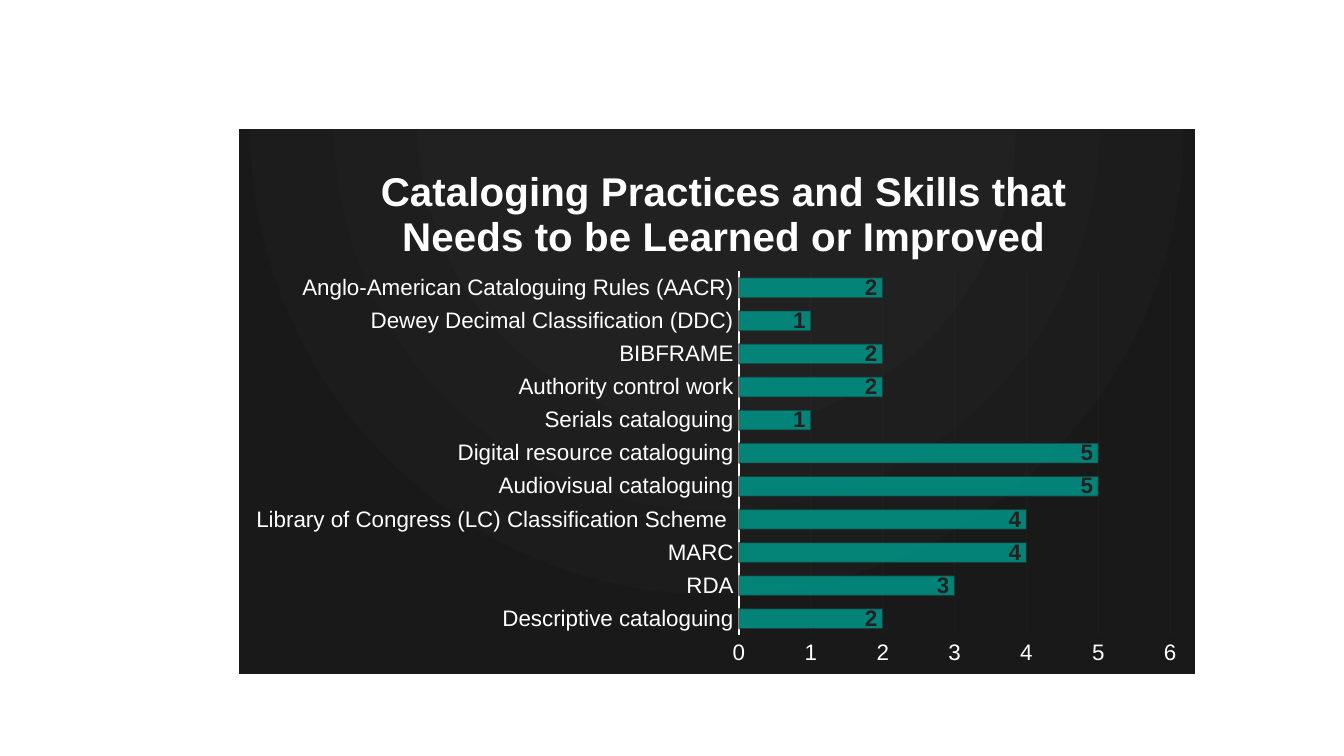
from pptx import Presentation
from pptx import oxml
from pptx import util as u
from pptx.chart import data
from pptx.dml import color
from pptx.enum import chart as ch
from pptx.enum import shapes
from pptx.oxml import ns

PX = 914400 * 10 / 1344  # EMU in one px
WIDTH, HEIGHT = 1344, 756
FONT = "Arial"
COLORS = {"white": "FFFFFF", "dark": "212121", "deep": "191919", "teal": "009688"}

TITLE = "Cataloging Practices and Skills that Needs to be Learned or Improved"
SKILLS = {
    "Descriptive cataloguing": 2,
    "RDA": 3,
    "MARC": 4,
    "Library of Congress (LC) Classification Scheme ": 4,
    "Audiovisual cataloguing": 5,
    "Digital resource cataloguing": 5,
    "Serials cataloguing": 1,
    "Authority control work": 2,
    "BIBFRAME": 2,
    "Dewey Decimal Classification (DDC)": 1,
    "Anglo-American Cataloguing Rules (AACR)": 2,
}

# Chart panel and the parts placed inside it: left, top, width, height
PANEL = (238, 128, 958, 547)
PLOT = (739, 271, 432, 365)
TITLE_CORNER = (373, 158)


def px(length):
    return u.Emu(round(length * PX))


def rgb(name):
    return color.RGBColor.from_string(COLORS[name])


def paint(fill, name):
    fill.solid()
    fill.fore_color.rgb = rgb(name)


def outline(line, name, points):
    paint(line.fill, name)
    line.width = u.Pt(points)


def style_font(font, size, name, bold=False):
    font.name, font.size, font.bold = FONT, u.Pt(size), bold
    font.color.rgb = rgb(name)


def set_opacity(element, path, percent):
    for tint in element.xpath(path):
        alpha = tint.makeelement(ns.qn("a:alpha"), {"val": str(percent * 1000)})
        tint.append(alpha)


def manual_layout(left, top, width=None, height=None, inner=False):
    """Layout element in fractions of the chart panel."""
    values = {"x": (left - PANEL[0]) / PANEL[2], "y": (top - PANEL[1]) / PANEL[3]}
    if width:
        values.update(w=width / PANEL[2], h=height / PANEL[3])
    target = '<c:layoutTarget val="inner"/>' if inner else ""
    modes = '<c:xMode val="edge"/><c:yMode val="edge"/>'
    sizes = "".join(f'<c:{key} val="{value:.4f}"/>' for key, value in values.items())
    return oxml.parse_xml(
        f'<c:layout {ns.nsdecls("c")}><c:manualLayout>{target}{modes}{sizes}'
        "</c:manualLayout></c:layout>"
    )


def add_backdrop(slide):
    paint(slide.background.fill, "dark")
    backdrop = slide.shapes.add_shape(
        shapes.MSO_SHAPE.RECTANGLE, 0, 0, px(WIDTH), px(HEIGHT)
    )
    backdrop.shadow.inherit = False
    paint(backdrop.fill, "white")
    outline(backdrop.line, "white", 2)


def add_skills_chart(slide):
    chart_data = data.CategoryChartData(number_format="General")
    chart_data.categories = SKILLS
    chart_data.add_series("Series 1", SKILLS.values())
    chart = slide.shapes.add_chart(
        ch.XL_CHART_TYPE.BAR_CLUSTERED, *map(px, PANEL), chart_data
    ).chart
    style_font(chart.font, 10, "white")
    chart.has_legend = False
    return chart


def style_panel(chart):
    stops = "".join(
        f'<a:gs pos="{place * 1000}"><a:srgbClr val="{COLORS[name]}"/></a:gs>'
        for place, name in ((0, "dark"), (39, "dark"), (100, "deep"))
    )
    panel = oxml.parse_xml(
        f'<c:spPr {ns.nsdecls("c", "a")}><a:gradFill><a:gsLst>{stops}</a:gsLst>'
        '<a:path path="circle">'
        '<a:fillToRect l="50000" t="-80000" r="50000" b="180000"/></a:path></a:gradFill>'
        f'<a:ln w="{u.Pt(0.75)}"><a:solidFill><a:srgbClr val="{COLORS["white"]}"/>'
        "</a:solidFill></a:ln></c:spPr>"
    )
    chart._chartSpace.xpath("c:chart")[0].addnext(panel)


def style_title(chart):
    heading = chart.chart_title.text_frame
    heading.text = TITLE
    style_font(heading.paragraphs[0].runs[0].font, 21.6, "white", bold=True)
    title = chart._chartSpace.xpath("c:chart/c:title")[0]
    for layout in title.xpath("c:layout"):
        title.remove(layout)
    title.xpath("c:tx")[0].addnext(manual_layout(*TITLE_CORNER))


def style_axes(chart):
    skills, counts = chart.category_axis, chart.value_axis
    for axis in (skills, counts):
        axis.major_tick_mark = axis.minor_tick_mark = ch.XL_TICK_MARK.NONE
        style_font(axis.tick_labels.font, 12, "white")
    outline(skills.format.line, "white", 1.5)
    counts.minimum_scale, counts.maximum_scale, counts.major_unit = 0, 6, 1
    counts.format.line.fill.background()

    # Barely visible gridlines
    outline(counts.major_gridlines.format.line, "white", 0.75)
    set_opacity(counts._element, "c:majorGridlines//a:srgbClr", 2)


def style_bars(chart):
    plot = chart.plots[0]
    plot.gap_width = 65
    plot.vary_by_categories = False
    bars = plot.series[0]
    paint(bars.format.fill, "teal")
    outline(bars.format.line, "dark", 0.75)
    set_opacity(bars._element, "c:spPr/a:solidFill/a:srgbClr", 85)
    set_opacity(bars._element, "c:spPr/a:ln//a:srgbClr", 50)

    # Counts at the inner end of each bar
    labels = bars.data_labels
    labels.show_value = True
    labels.position = ch.XL_LABEL_POSITION.INSIDE_END
    style_font(labels.font, 12, "dark", bold=True)

    # Plot position
    area = chart._chartSpace.xpath("c:chart/c:plotArea")[0]
    for layout in area.xpath("c:layout"):
        area.remove(layout)
    area.insert(0, manual_layout(*PLOT, inner=True))


def main():
    deck = Presentation()
    deck.slide_width, deck.slide_height = px(WIDTH), px(HEIGHT)
    slide = deck.slides.add_slide(deck.slide_layouts[6])
    add_backdrop(slide)
    chart = add_skills_chart(slide)
    style_panel(chart)
    style_title(chart)
    style_axes(chart)
    style_bars(chart)
    deck.save("out.pptx")


if __name__ == "__main__":
    main()
